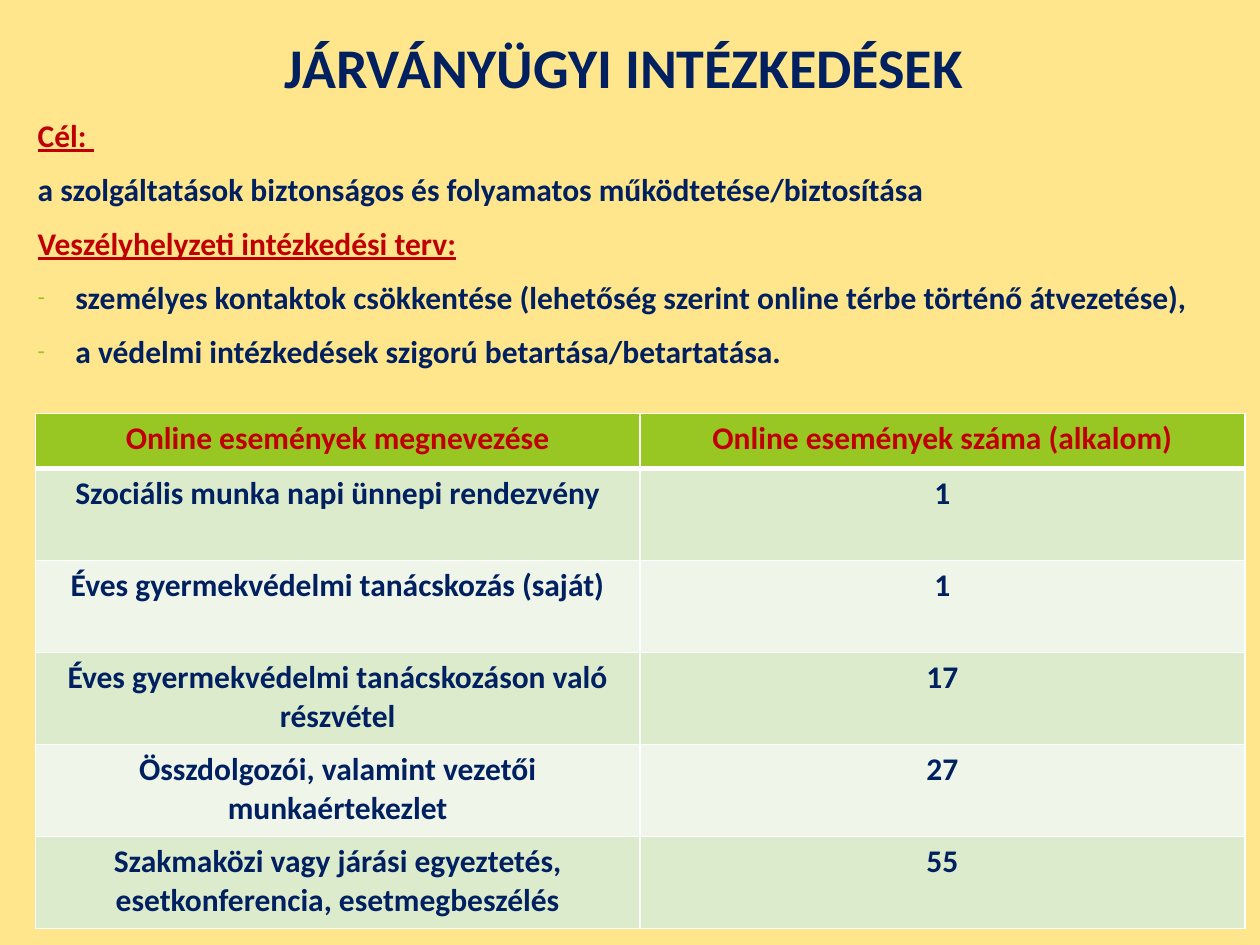
from lxml.etree import SubElement
from pptx import Presentation
from pptx.dml.color import RGBColor
from pptx.enum.text import PP_ALIGN
from pptx.oxml import parse_xml
from pptx.oxml.ns import nsdecls, qn
from pptx.util import Inches, Pt

NAVY, RED, GREEN, WHITE = "002060", "C00000", "98C723", "FFFFFF"
BACKGROUND = "FFE68C"
BANDS = ("DDEBCD", "EFF5E8")

TITLE = "JÁRVÁNYÜGYI INTÉZKEDÉSEK "
# (text, kind)
BODY = [
    ("Cél: ", "heading"),
    ("a szolgáltatások biztonságos és folyamatos működtetése/biztosítása", "plain"),
    ("Veszélyhelyzeti intézkedési terv:", "heading"),
    ("személyes kontaktok csökkentése (lehetőség szerint online térbe történő átvezetése),", "bullet"),
    ("a védelmi intézkedések szigorú betartása/betartatása.", "bullet"),
]
EVENTS = [
    ("Online események megnevezése", "Online események száma (alkalom)"),
    ("Szociális munka napi ünnepi rendezvény", "1"),
    ("Éves gyermekvédelmi tanácskozás (saját)", "1"),
    ("Éves gyermekvédelmi tanácskozáson való részvétel", "17"),
    ("Összdolgozói, valamint vezetői munkaértekezlet", "27"),
    ("Szakmaközi vagy járási egyeztetés, esetkonferencia, esetmegbeszélés", "55"),
]
HEADER_HEIGHT, ROW_HEIGHT, COLUMN_WIDTH = 0.44, 0.73, 4.8


def color(value):
    return RGBColor.from_string(value)


def write(para, text, size=18, fill=NAVY, underline=False, align=PP_ALIGN.CENTER):
    para.alignment = align
    span = para.add_run()
    span.text = text
    font = span.font
    font.name, font.size, font.bold = "Calibri", Pt(size), True
    font.underline = underline
    font.color.rgb = color(fill)


def add_dash(para):
    """Give the paragraph a small green dash and a hanging indent."""
    props = para._p.get_or_add_pPr()
    props.set("marL", str(Inches(0.3)))
    props.set("indent", str(Inches(-0.3)))
    bullet_color = SubElement(props, qn("a:buClr"))
    SubElement(bullet_color, qn("a:srgbClr"), val=GREEN)
    SubElement(props, qn("a:buSzPct"), val="76000")
    SubElement(props, qn("a:buFont"), typeface="Calibri")
    SubElement(props, qn("a:buChar"), char="-")


def set_borders(cell, **widths):
    """Draw white borders; the keywords L, R, T and B are widths in points."""
    props = cell._tc.get_or_add_tcPr()
    for place, (side, width) in enumerate(widths.items()):
        props.insert(place, parse_xml(
            f'<a:ln{side} {nsdecls("a")} w="{Pt(width)}"><a:solidFill>'
            f'<a:srgbClr val="{WHITE}"/></a:solidFill></a:ln{side}>'))


def add_body(page):
    box = page.shapes.add_textbox(Inches(0.2), Inches(0.13), Inches(9.61), Inches(7.09))
    frame = box.text_frame
    frame.word_wrap = True
    write(frame.paragraphs[0], TITLE, size=32)
    for text, kind in BODY:
        para = frame.add_paragraph()
        heading = kind == "heading"
        write(para, text, fill=RED if heading else NAVY, underline=heading,
              align=PP_ALIGN.JUSTIFY)
    for para in frame.paragraphs:
        para.line_spacing = 1.15
        para.space_before = Pt(6)
    for para, (_, kind) in zip(frame.paragraphs[1:], BODY):
        if kind == "bullet":
            add_dash(para)


def add_events(page):
    rows, columns = len(EVENTS), len(EVENTS[0])
    height = HEADER_HEIGHT + ROW_HEIGHT * (rows - 1)
    table = page.shapes.add_table(rows, columns, Inches(0.28), Inches(3.28),
                                  Inches(COLUMN_WIDTH * columns), Inches(height)).table
    for column in table.columns:
        column.width = Inches(COLUMN_WIDTH)
    for r, values in enumerate(EVENTS):
        header = r == 0
        table.rows[r].height = Inches(HEADER_HEIGHT if header else ROW_HEIGHT)
        for c, text in enumerate(values):
            cell = table.cell(r, c)
            cell.fill.solid()
            cell.fill.fore_color.rgb = color(GREEN if header else BANDS[(r - 1) % 2])
            write(cell.text_frame.paragraphs[0], text, fill=RED if header else NAVY)
            set_borders(cell, L=1, R=1, T=3 if r == 1 else 1, B=3 if header else 1)


def main():
    deck = Presentation()
    deck.slide_width, deck.slide_height = Inches(10), Inches(7.5)
    page = deck.slides.add_slide(deck.slide_layouts[6])
    page.background.fill.solid()
    page.background.fill.fore_color.rgb = color(BACKGROUND)
    add_body(page)
    add_events(page)
    deck.save("out.pptx")


if __name__ == "__main__":
    main()
